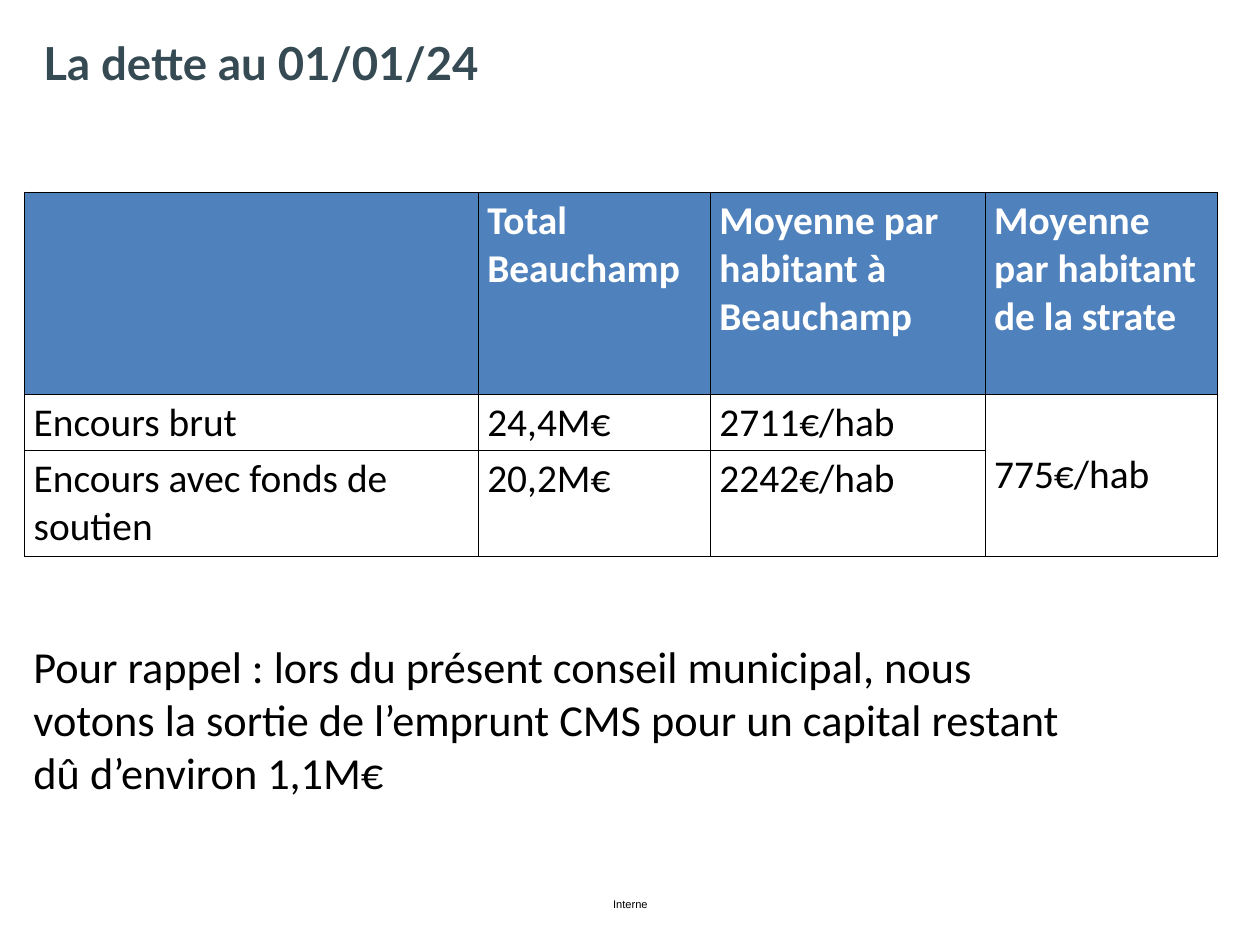
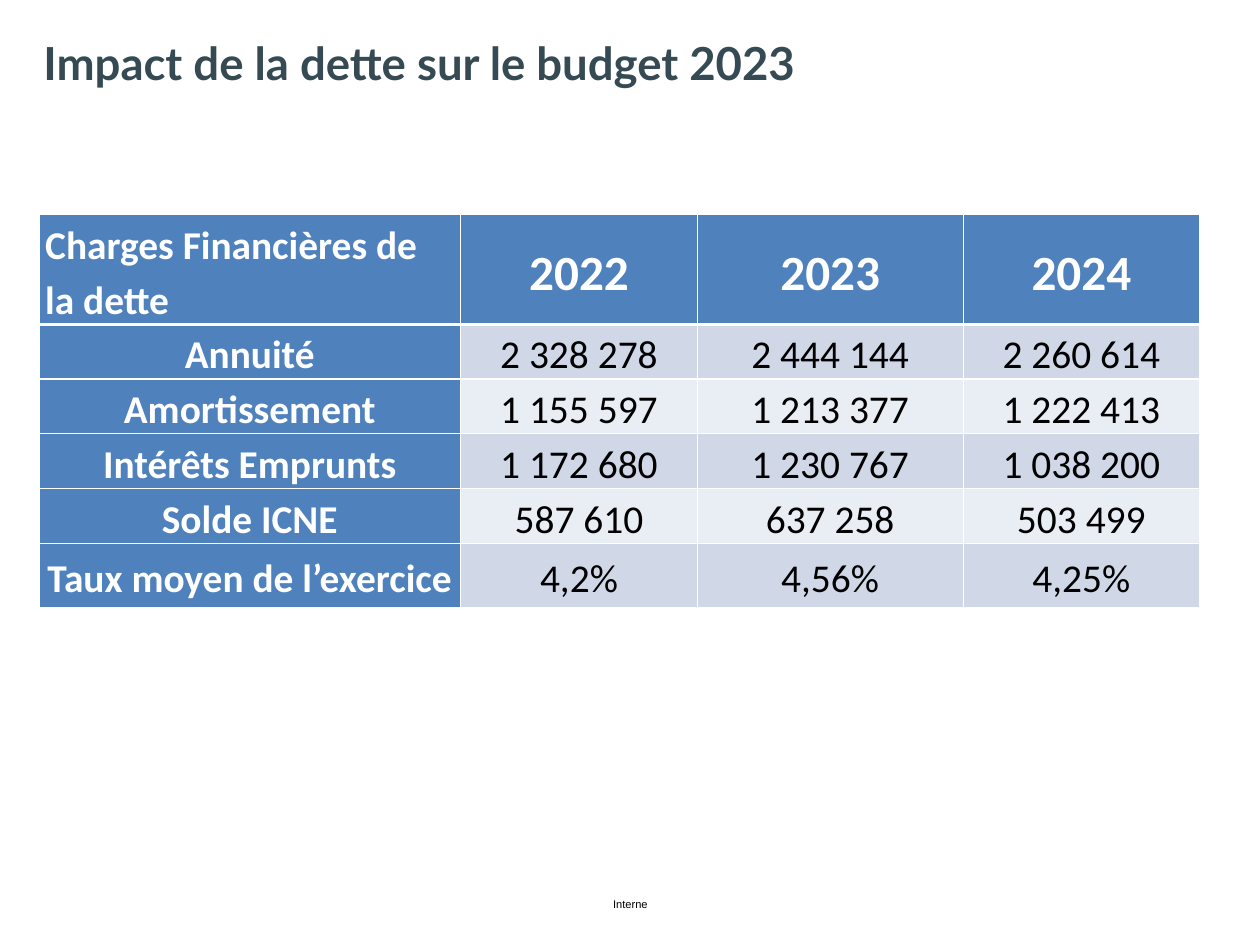
from lxml.etree import SubElement
from pptx import Presentation
from pptx.dml.color import RGBColor
from pptx.enum.text import MSO_ANCHOR, MSO_AUTO_SIZE, PP_ALIGN
from pptx.oxml.ns import qn
from pptx.util import Inches, Pt

BLACK = RGBColor(0x00, 0x00, 0x00)
WHITE = RGBColor(0xFF, 0xFF, 0xFF)
SLATE = RGBColor(0x35, 0x4A, 0x52)
BLUE = RGBColor(0x4F, 0x81, 0xBD)
BANDS = RGBColor(0xD0, 0xD8, 0xE8), RGBColor(0xE9, 0xED, 0xF4)

DEBT = [
    ["", "Total Beauchamp", "Moyenne par habitant à Beauchamp",
     "Moyenne par habitant de la strate"],
    ["Encours brut", "24,4M€", "2711€/hab", "775€/hab"],
    ["Encours avec fonds de soutien", "20,2M€", "2242€/hab", ""],
]
COSTS = [
    ["Charges Financières de la dette", "2022", "2023", "2024"],
    ["Annuité", "2 328 278", "2 444 144", "2 260 614"],
    ["Amortissement", "1 155 597", "1 213 377", "1 222 413"],
    ["Intérêts Emprunts", "1 172 680", "1 230 767", "1 038 200"],
    ["Solde ICNE", "587 610", "637 258", "503 499"],
    ["Taux moyen de l’exercice", "4,2%", "4,56%", "4,25%"],
]


def style(frame, name, size, color, bold=False):
    for par in frame.paragraphs:
        for run in par.runs:
            font = run.font
            font.name, font.size, font.bold = name, Pt(size), bold
            font.color.rgb = color


def inset(item, side, top):
    """Set the margins of a text frame or a table cell."""
    item.margin_left = item.margin_right = Inches(side)
    item.margin_top = item.margin_bottom = Inches(top)


def place(shape, left, top, width, height):
    shape.left, shape.top = Inches(left), Inches(top)
    shape.width, shape.height = Inches(width), Inches(height)


def add_text(slide, text, box, name, size, wrap=True):
    frame = slide.shapes.add_textbox(*map(Inches, box)).text_frame
    frame.word_wrap = wrap
    frame.text = text
    style(frame, name, size, BLACK)
    return frame


def add_slide(deck, text):
    """Add a slide with the shared title and footer."""
    slide = deck.slides.add_slide(deck.slide_layouts[5])
    inset(add_text(slide, "Interne", (6.92, 10.13, 0.42, 0.15), "Arial", 9, False), 0, 0)
    title = slide.shapes.title
    place(title, 0.49, 0.39, 13.25, 0.62)
    frame = title.text_frame
    frame.text = text
    frame.auto_size = MSO_AUTO_SIZE.NONE
    frame.vertical_anchor = MSO_ANCHOR.TOP
    frame.paragraphs[0].alignment = PP_ALIGN.LEFT
    inset(frame, 0, 0)
    style(frame, "Lato", 37, SLATE, True)
    return slide


def set_edges(cell, color, base=1):
    """Draw all four borders, the bottom one base points wide."""
    props = cell._tc.get_or_add_tcPr()
    for i, side in enumerate("LRTB"):
        width = Pt(base if side == "B" else 1)
        line = SubElement(props, qn(f"a:ln{side}"), w=str(width))
        fill = SubElement(line, qn("a:solidFill"))
        SubElement(fill, qn("a:srgbClr"), val=str(color))
        props.insert(i, line)


def add_grid(slide, data, left, top, cols, rows):
    size = Inches(sum(cols)), Inches(sum(rows))
    frame = slide.shapes.add_table(
        len(rows), len(cols), Inches(left), Inches(top), *size)
    table = frame.table
    table.first_row = table.horz_banding = False
    for col, width in zip(table.columns, cols):
        col.width = Inches(width)
    for row, height, texts in zip(table.rows, rows, data):
        row.height = Inches(height)
        for cell, text in zip(row.cells, texts):
            cell.text = text
    return table


def paint(cell, fill, size=32):
    """Fill a cell; blue ones carry bold white text."""
    if fill is None:
        cell.fill.background()
    else:
        cell.fill.solid()
        cell.fill.fore_color.rgb = fill
    head = fill == BLUE
    style(cell.text_frame, "Calibri", size, WHITE if head else BLACK, head)


def add_debt(slide):
    table = add_grid(slide, DEBT, 0.28, 2.17, (5.12, 2.62, 3.1, 2.62), (2.28, 0.64, 1.19))
    for r, row in enumerate(table.rows):
        for cell in row.cells:
            inset(cell, 0.1, 0.05)
            paint(cell, None if r else BLUE)
            set_edges(cell, BLACK)
    mean = table.cell(1, 3)
    mean.merge(table.cell(2, 3))
    mean.vertical_anchor = MSO_ANCHOR.MIDDLE


def add_costs(slide):
    rows = (1.24, *[0.62] * 4, 0.72)
    table = add_grid(slide, COSTS, 0.44, 2.42, (4.76, 2.67, 3, 2.67), rows)
    for r, row in enumerate(table.rows):
        for c, cell in enumerate(row.cells):
            inset(cell, 0.07, 0)
            cell.vertical_anchor = MSO_ANCHOR.MIDDLE
            par = cell.text_frame.paragraphs[0]
            par.alignment = PP_ALIGN.CENTER if r or c else PP_ALIGN.LEFT
            par.line_spacing, par.space_after = 1.15, Pt(10)
            fill = BANDS[(r - 1) % 2] if r and c else BLUE
            paint(cell, fill, 40 if c and not r else 32)
            set_edges(cell, WHITE, 1 if r else 3)


def main():
    deck = Presentation()
    deck.slide_width, deck.slide_height = Inches(14.22), Inches(10.67)
    slide = add_slide(deck, "La dette au 01/01/24")
    add_debt(slide)
    add_text(slide, "Pour rappel : lors du présent conseil municipal, nous votons la "
             "sortie de l’emprunt CMS pour un capital restant dû d’environ 1,1M€",
             (0.28, 7.17, 12, 1.92), "Calibri", 36)
    add_costs(add_slide(deck, "Impact de la dette sur le budget 2023"))
    deck.save("out.pptx")


if __name__ == "__main__":
    main()
